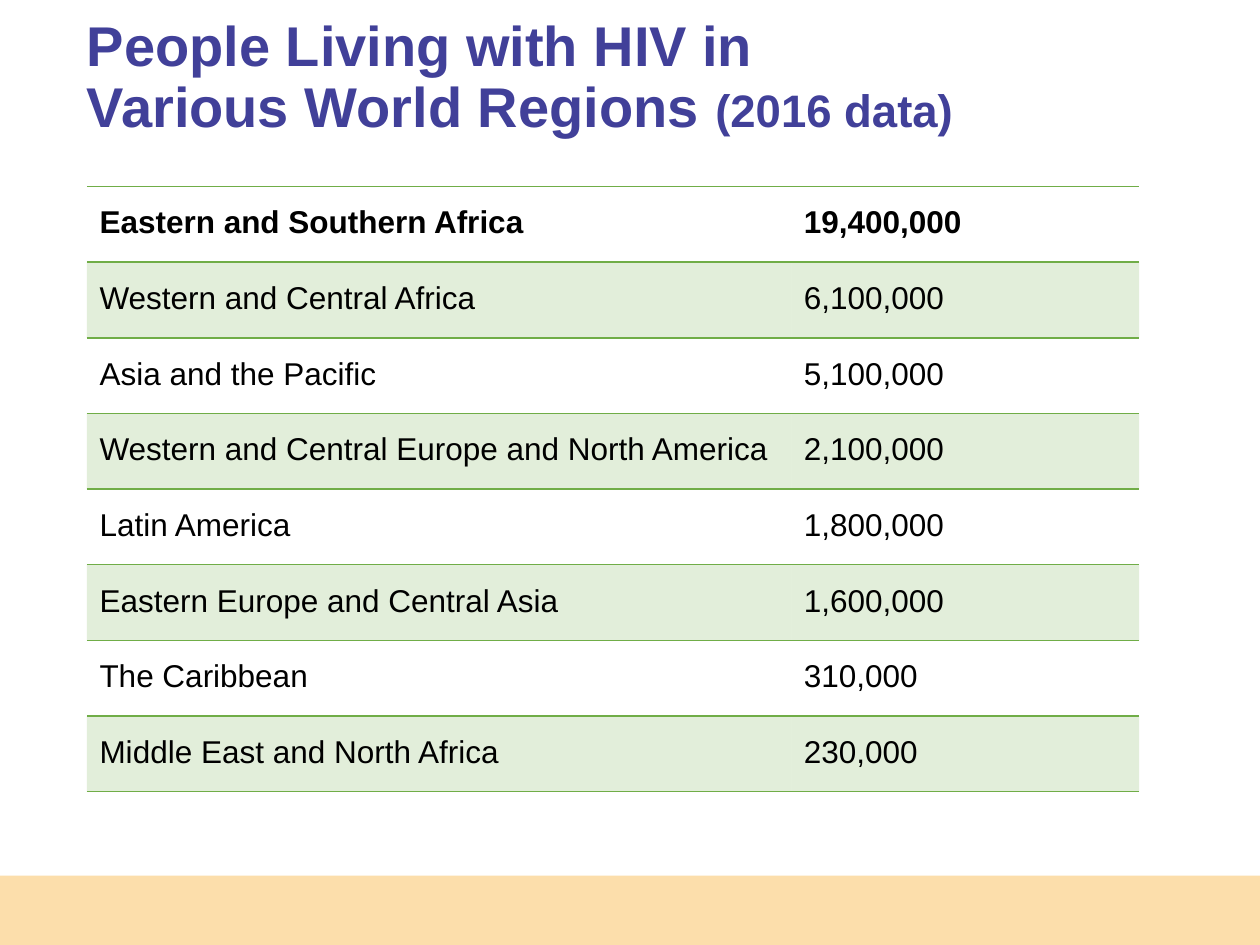
from lxml.etree import SubElement
from pptx import Presentation
from pptx.dml.color import RGBColor
from pptx.enum.shapes import MSO_SHAPE
from pptx.enum.text import MSO_ANCHOR
from pptx.oxml.ns import qn
from pptx.util import Inches, Pt

TITLE_BLUE = RGBColor(0x41, 0x40, 0x99)
GREEN = RGBColor(0x70, 0xAD, 0x47)
BAND_SAND = RGBColor(0xFC, 0xDE, 0xAB)
BLACK = RGBColor(0, 0, 0)
FONT = "Arial"

REGIONS = [
    ("Eastern and Southern Africa", "19,400,000"),
    ("Western and Central Africa", "6,100,000"),
    ("Asia and the Pacific", "5,100,000"),
    ("Western and Central Europe and North America", "2,100,000"),
    ("Latin America", "1,800,000"),
    ("Eastern Europe and Central Asia", "1,600,000"),
    ("The Caribbean", "310,000"),
    ("Middle East and North Africa", "230,000"),
]
COLUMN_WIDTHS = (5.59, 2.76)
ROW_HEIGHT = 0.58


def add_text(paragraph, text, *, size, color=BLACK, bold=False):
    run = paragraph.add_run()
    run.text = text
    font = run.font
    font.name, font.size, font.bold = FONT, Pt(size), bold
    font.color.rgb = color


def add_footer_band(slide):
    band = slide.shapes.add_shape(
        MSO_SHAPE.RECTANGLE, 0, Inches(6.95), Inches(10), Inches(0.55))
    band.shadow.inherit = False
    band.fill.solid()
    band.fill.fore_color.rgb = BAND_SAND
    band.line.fill.background()


def add_title(slide):
    title = slide.shapes.add_textbox(
        Inches(0.69), 0, Inches(8.62), Inches(1.25)).text_frame
    title.word_wrap = True
    title.vertical_anchor = MSO_ANCHOR.MIDDLE
    title.margin_left = title.margin_right = 0
    title.margin_top = title.margin_bottom = 0
    heading = title.paragraphs[0]
    heading.line_spacing = 0.9
    add_text(heading, "People Living with HIV in", size=32, color=TITLE_BLUE, bold=True)
    heading.add_line_break()
    add_text(heading, "Various World Regions ", size=32, color=TITLE_BLUE, bold=True)
    add_text(heading, "(2016 data)", size=26, color=TITLE_BLUE, bold=True)


def fill_cell(cell, shaded):
    if not shaded:
        cell.fill.background()
        return
    cell.fill.solid()
    cell.fill.fore_color.rgb = GREEN
    tint = cell._tc.tcPr.find(qn("a:solidFill"))[0]
    SubElement(tint, qn("a:alpha"), val="20000")


def rule_cell(cell):
    """Green rules above and below, none at the sides."""
    properties = cell._tc.tcPr
    for position, side in enumerate(("lnL", "lnR", "lnT", "lnB")):
        rule = SubElement(properties, qn(f"a:{side}"), w=str(Pt(1)))
        if side in ("lnT", "lnB"):
            paint = SubElement(rule, qn("a:solidFill"))
            SubElement(paint, qn("a:srgbClr"), val=str(GREEN))
        else:
            SubElement(rule, qn("a:noFill"))
        properties.insert(position, rule)  # rules come before the fill


def add_region_table(slide):
    table = slide.shapes.add_table(
        len(REGIONS), len(COLUMN_WIDTHS), Inches(0.69), Inches(1.48),
        Inches(sum(COLUMN_WIDTHS)), Inches(ROW_HEIGHT * len(REGIONS))).table
    table.first_row = table.horz_banding = False
    for column, width in zip(table.columns, COLUMN_WIDTHS):
        column.width = Inches(width)
    for row, region in enumerate(REGIONS):
        table.rows[row].height = Inches(ROW_HEIGHT)
        for column, text in enumerate(region):
            cell = table.cell(row, column)
            cell.margin_left = cell.margin_right = Inches(0.1)
            cell.margin_top = cell.margin_bottom = Inches(0.15)
            add_text(cell.text_frame.paragraphs[0], text, size=18, bold=row == 0)
            fill_cell(cell, shaded=row % 2 == 1)
            rule_cell(cell)


def main():
    presentation = Presentation()
    presentation.slide_width = Inches(10)
    presentation.slide_height = Inches(7.5)
    slide = presentation.slides.add_slide(presentation.slide_layouts[6])

    # Band at the foot, heading, then the figures by region
    add_footer_band(slide)
    add_title(slide)
    add_region_table(slide)
    presentation.save("out.pptx")


if __name__ == "__main__":
    main()
